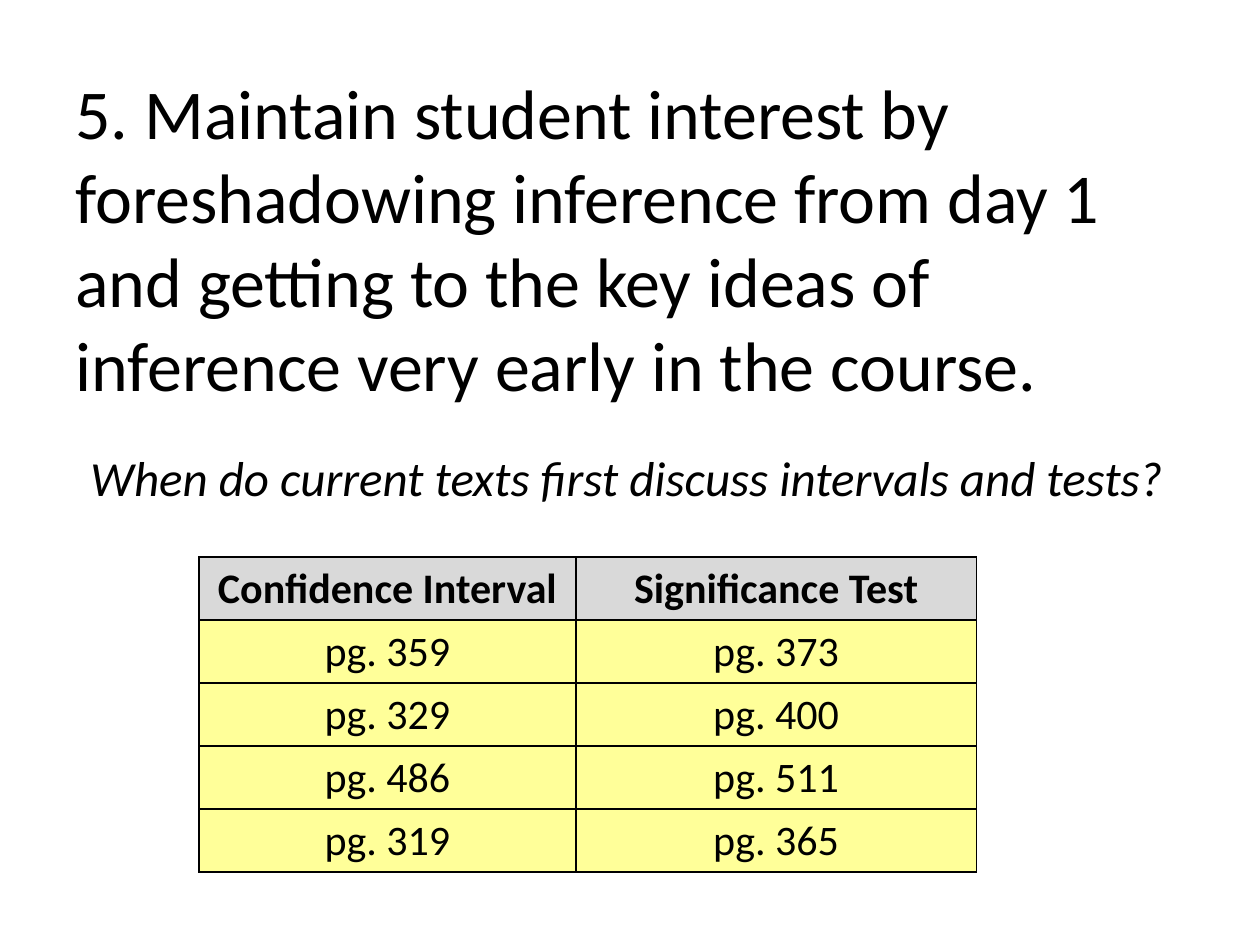
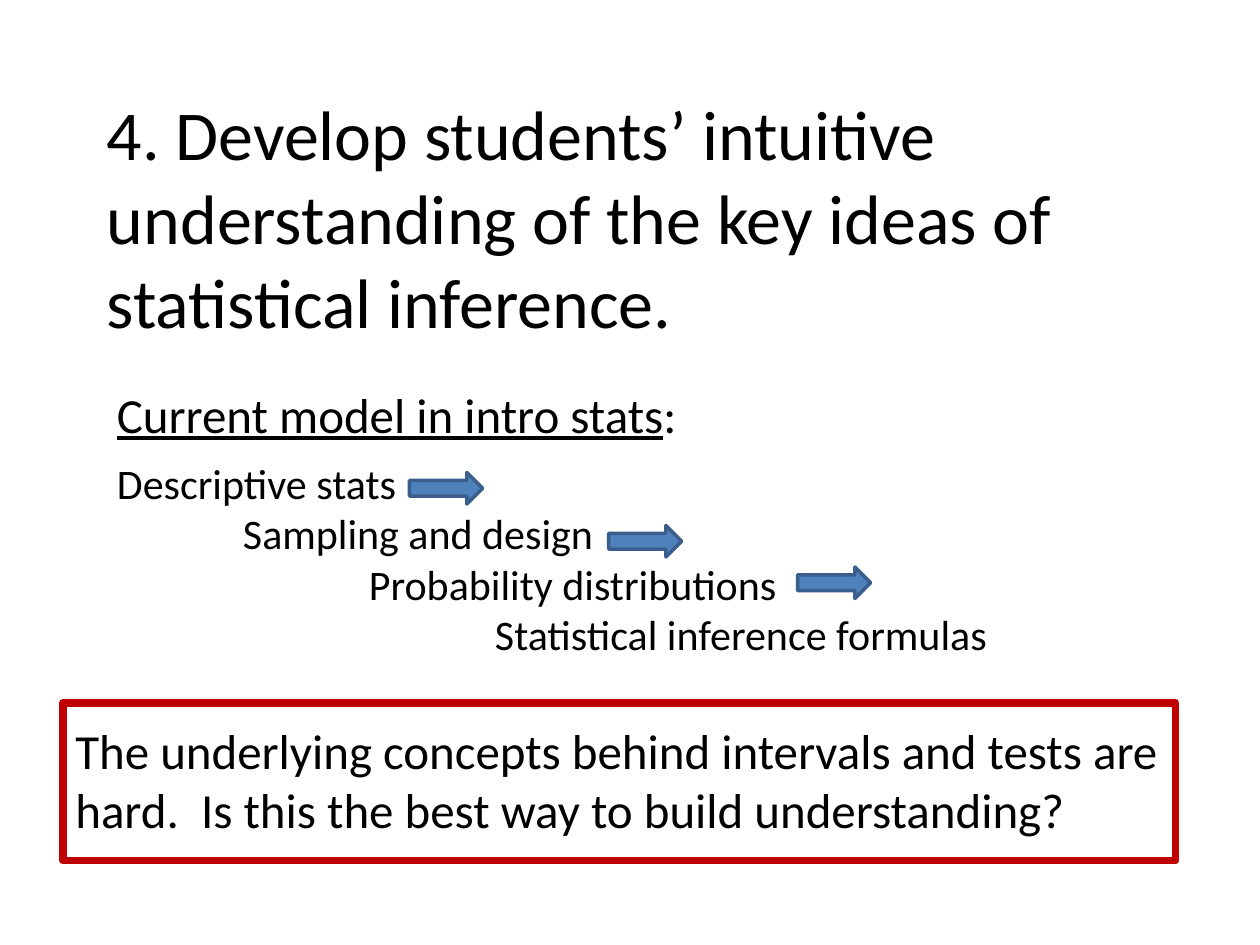
from dataclasses import dataclass

from lxml import etree
from pptx import Presentation
from pptx import util as u
from pptx.dml.color import RGBColor
from pptx.enum import shapes, text
from pptx.oxml import ns

FONT = "Calibri"
TITLE, LEAD, BODY = 40, 28, 24  # text sizes in points
HEX = {"ink": "000000", "head": "D9D9D9", "cell": "FFFF99",
       "arrow": "4F81BD", "edge": "3A5F8C", "frame": "C00000"}


@dataclass
class Box:
    left: float
    top: float
    width: float
    height: float

    def place(self) -> tuple:
        return tuple(u.Inches(v) for v in
                     (self.left, self.top, self.width, self.height))


def color(name: str) -> RGBColor:
    return RGBColor.from_string(HEX[name])


def write(para, words: str, size: int = BODY, bold: bool = False,
          italic: bool = False, under: bool = False, align=None) -> None:
    """Add one formatted run to a paragraph."""
    run = para.add_run()
    run.text = words
    font = run.font
    font.name, font.size = FONT, u.Pt(size)
    font.bold, font.italic, font.underline = bold, italic, under
    font.color.rgb = color("ink")
    if align is not None:
        para.alignment = align


def add_text(slide, box: Box):
    """Add a wrapping text box and return its frame."""
    frame = slide.shapes.add_textbox(*box.place()).text_frame
    frame.word_wrap = True
    frame.auto_size = text.MSO_AUTO_SIZE.SHAPE_TO_FIT_TEXT
    return frame


def add_line(slide, box: Box, words: str, **style) -> None:
    write(add_text(slide, box).paragraphs[0], words, **style)


def add_form(slide, kind, box: Box, edge: str, width: float, fill: str = ""):
    """Add a preset shape with an outline and an optional fill."""
    form = slide.shapes.add_shape(kind, *box.place())
    form.shadow.inherit = False
    if fill:
        form.fill.solid()
        form.fill.fore_color.rgb = color(fill)
    else:
        form.fill.background()
    form.line.color.rgb = color(edge)
    form.line.width = u.Pt(width)


def add_edges(cell) -> None:
    """Draw a thin line on all four sides of a cell."""
    props = cell._tc.get_or_add_tcPr()
    for side in ("a:lnL", "a:lnR", "a:lnT", "a:lnB"):
        line = etree.SubElement(props, ns.qn(side), w=str(u.Pt(1)))
        fill = etree.SubElement(line, ns.qn("a:solidFill"))
        etree.SubElement(fill, ns.qn("a:srgbClr"), val=HEX["ink"])


def add_grid(slide, box: Box, widths: list[float], rows: list[tuple]) -> None:
    """Add a table whose first row is the header."""
    grid = slide.shapes.add_table(len(rows), len(widths), *box.place()).table
    for col, width in zip(grid.columns, widths):
        col.width = u.Inches(width)
    for r, row in enumerate(rows):
        grid.rows[r].height = u.Inches(box.height / len(rows))
        for c, words in enumerate(row):
            cell = grid.cell(r, c)
            add_edges(cell)
            cell.fill.solid()
            cell.fill.fore_color.rgb = color("cell" if r else "head")
            write(cell.text_frame.paragraphs[0], words, bold=r == 0,
                  align=text.PP_ALIGN.CENTER)


def early(slide) -> None:
    """Slide on foreshadowing inference."""
    add_line(slide, Box(0.5, 0.5, 9.08, 2.79),
             "5. Maintain student interest by foreshadowing inference from "
             "day 1 and getting to the key ideas of inference very early in "
             "the course.", size=TITLE)
    add_line(slide, Box(0.62, 3.5, 8.83, 0.57),
             "When do current texts first discuss intervals and tests?",
             size=LEAD, italic=True)
    pages = [(359, 373), (329, 400), (486, 511), (319, 365)]
    rows = [("Confidence Interval", "Significance Test")]
    rows += [tuple(f"pg. {page}" for page in pair) for pair in pages]
    add_grid(slide, Box(1.58, 4.42, 6.17, 2.5), [2.99, 3.18], rows)


def model(slide) -> None:
    """Slide on the current course model."""
    add_line(slide, Box(0.75, 0.67, 8.42, 2.12),
             "4. Develop students’ intuitive understanding of the key ideas "
             "of statistical inference.", size=TITLE)

    # Course steps, each one inch further in
    steps = ["Descriptive stats", "Sampling and design",
             "Probability distributions", "Statistical inference formulas"]
    frame = add_text(slide, Box(0.83, 3.58, 8.42, 1.72))
    for i, step in enumerate(steps):
        para = frame.add_paragraph() if i else frame.paragraphs[0]
        para._p.get_or_add_pPr().set("marL", str(u.Inches(i)))
        write(para, step)

    # Arrows from step to step
    for left, top in [(3.25, 3.75), (4.83, 4.17), (6.33, 4.5)]:
        add_form(slide, shapes.MSO_SHAPE.RIGHT_ARROW,
                 Box(left, top, 0.58, 0.25), "edge", 2, fill="arrow")

    # Heading of the steps
    para = add_text(slide, Box(0.83, 3, 5.33, 0.57)).paragraphs[0]
    write(para, "Current model in intro stats", size=LEAD, under=True)
    write(para, ":", size=LEAD)

    # Framed question
    add_line(slide, Box(0.5, 5.67, 9, 1.04),
             "The underlying concepts behind intervals and tests are hard.  "
             "Is this the best way to build understanding?", size=LEAD)
    add_form(slide, shapes.MSO_SHAPE.RECTANGLE,
             Box(0.5, 5.58, 8.83, 1.25), "frame", 4.5)


def main() -> None:
    deck = Presentation()
    deck.slide_width, deck.slide_height = u.Inches(10), u.Inches(7.5)
    for build in (early, model):
        build(deck.slides.add_slide(deck.slide_layouts[6]))
    deck.save("out.pptx")


if __name__ == "__main__":
    main()
